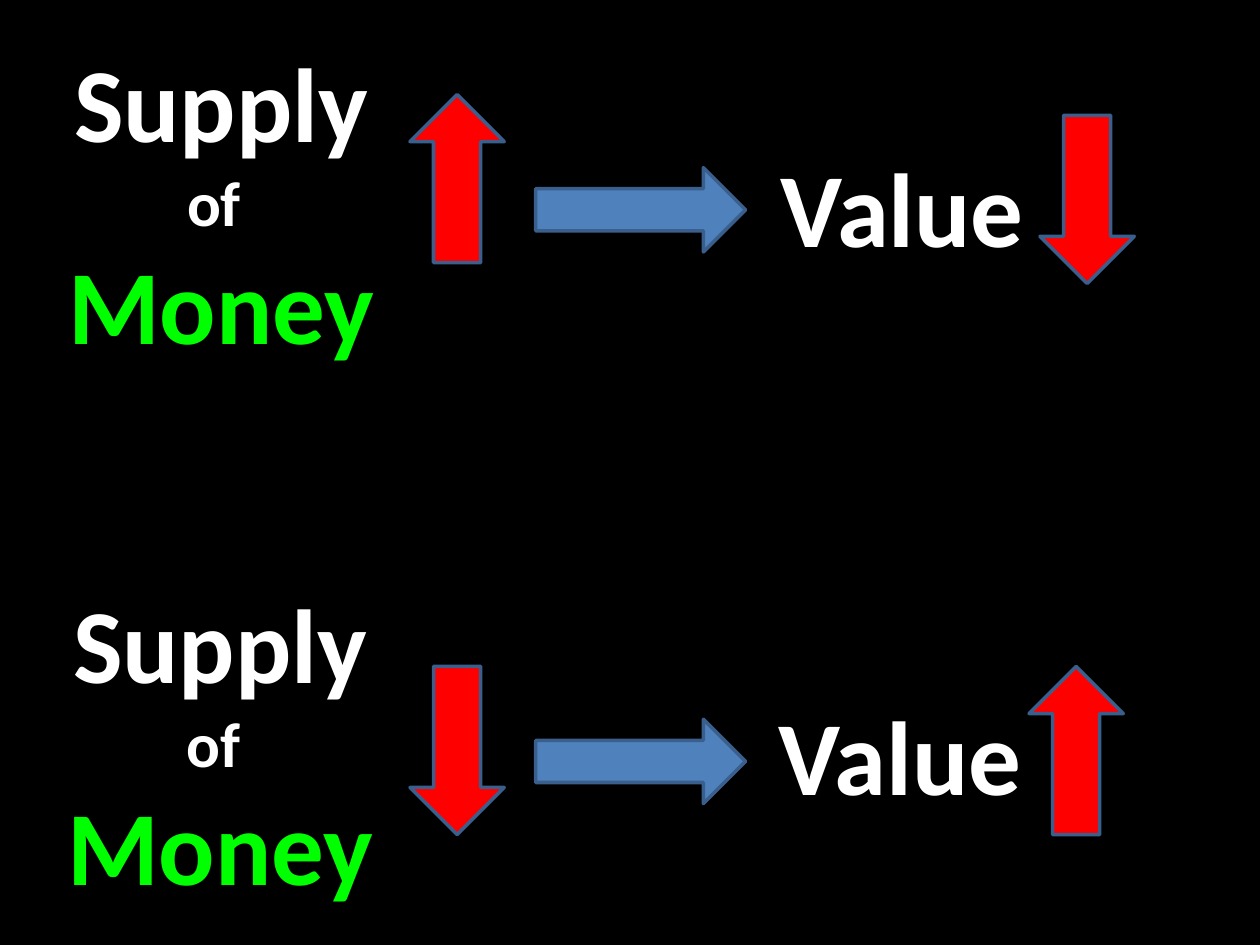
from dataclasses import dataclass

import pptx
import pptx.dml.color
import pptx.enum.shapes
import pptx.enum.text
import pptx.util

Cm = pptx.util.Cm
ALIGN = pptx.enum.text.PP_ALIGN
UP, RIGHT, DOWN = 270, 0, 90
WHITE, GREEN, RED, BLUE, OUTLINE = "FFFFFF", "00FF00", "FF0000", "4F81BD", "3A5F8C"


@dataclass
class Line:
    text: str
    size: int = 60
    color: str = WHITE


@dataclass
class Arrow:
    left: float
    top: float
    direction: int
    width: float = 3.39
    height: float = 1.9
    fill: str = RED


@dataclass
class Relation:
    """How a change in the supply of money moves its value; lengths in cm."""
    supply_at: tuple[float, float]
    value_at: tuple[float, float]
    arrows: list[Arrow]


SUPPLY_OF_MONEY = [Line("Supply"), Line("of ", size=36), Line("Money", color=GREEN)]
VALUE = [Line("Value")]


def cause_arrow(top: float) -> Arrow:
    return Arrow(10.8, top, RIGHT, width=4.23, height=1.7, fill=BLUE)


RELATIONS = [
    Relation((1.08, 0.64), (15.49, 2.74),
             [Arrow(7.52, 2.65, UP), cause_arrow(3.38), Arrow(20.22, 3.07, DOWN)]),
    Relation((1.06, 11.54), (15.44, 13.79),
             [Arrow(7.52, 14.18, DOWN), cause_arrow(14.5), Arrow(20.0, 14.18, UP)]),
]


def rgb(color: str) -> pptx.dml.color.RGBColor:
    return pptx.dml.color.RGBColor.from_string(color)


def add_text(slide, lines: list[Line], *, at: tuple[float, float],
             size: tuple[float, float], align=ALIGN.LEFT, wrap: bool = True) -> None:
    box = slide.shapes.add_textbox(*map(Cm, at + size))
    frame = box.text_frame
    frame.word_wrap = wrap
    for number, line in enumerate(lines):
        paragraph = frame.add_paragraph() if number else frame.paragraphs[0]
        paragraph.alignment = align
        run = paragraph.add_run()
        run.text = line.text
        run.font.name = "Calibri"
        run.font.bold = True
        run.font.size = pptx.util.Pt(line.size)
        run.font.color.rgb = rgb(line.color)


def add_arrow(slide, arrow: Arrow) -> None:
    shape = slide.shapes.add_shape(
        pptx.enum.shapes.MSO_SHAPE.RIGHT_ARROW,
        Cm(arrow.left), Cm(arrow.top), Cm(arrow.width), Cm(arrow.height))
    shape.rotation = arrow.direction
    shape.shadow.inherit = False
    shape.fill.solid()
    shape.fill.fore_color.rgb = rgb(arrow.fill)
    shape.line.color.rgb = rgb(OUTLINE)
    shape.line.width = pptx.util.Pt(2)


def main() -> None:
    deck = pptx.Presentation()
    deck.slide_width, deck.slide_height = Cm(25.4), Cm(19.05)
    slide = deck.slides.add_slide(deck.slide_layouts[6])
    slide.background.fill.solid()
    slide.background.fill.fore_color.rgb = rgb("000000")

    for relation in RELATIONS:
        add_text(slide, SUPPLY_OF_MONEY, at=relation.supply_at, size=(6.76, 7.09),
                 align=ALIGN.CENTER, wrap=False)
        add_text(slide, VALUE, at=relation.value_at, size=(7.95, 2.82))
        for arrow in relation.arrows:
            add_arrow(slide, arrow)

    deck.save("out.pptx")


if __name__ == "__main__":
    main()
